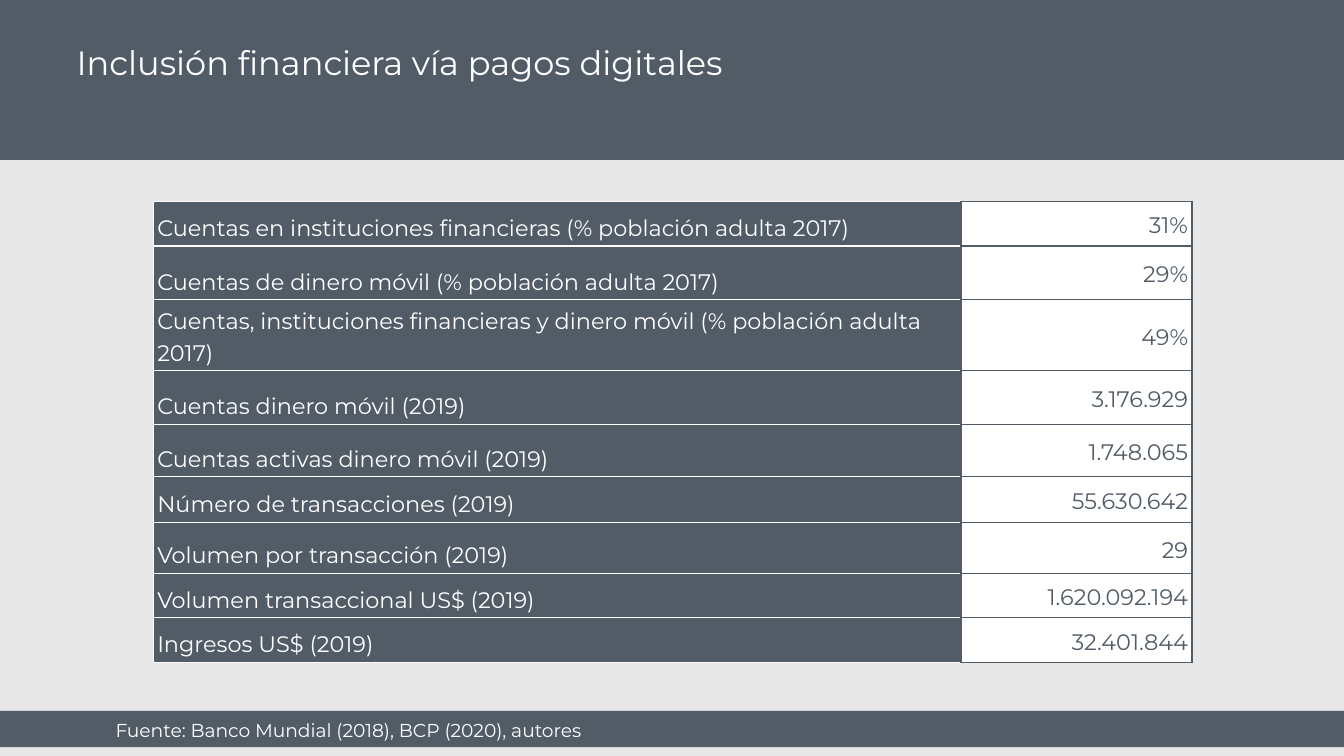
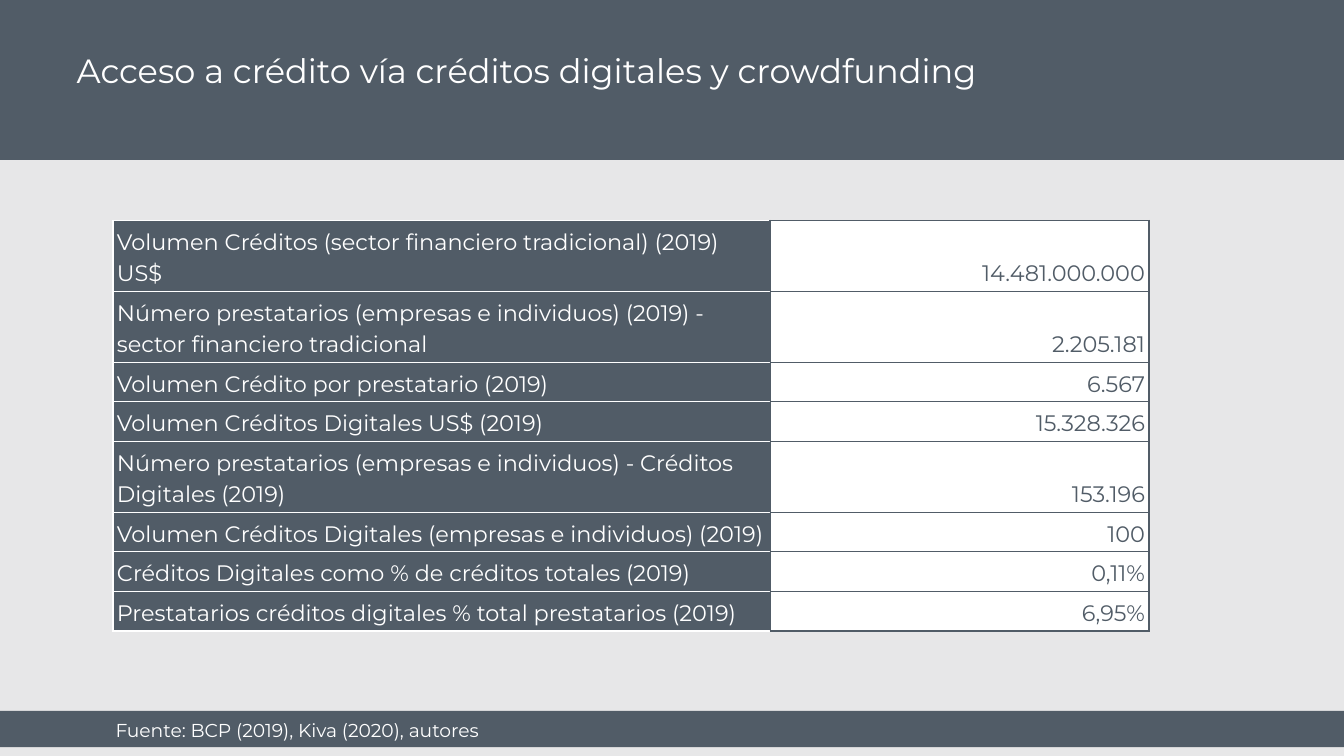
from pptx import Presentation
from pptx.dml.color import RGBColor
from pptx.enum.shapes import MSO_SHAPE
from pptx.enum.text import MSO_ANCHOR as ANCHOR, MSO_AUTO_SIZE, PP_ALIGN as ALIGN
from pptx.oxml.ns import qn
from pptx.util import Inches, Pt
from lxml.etree import SubElement

SLATE, WHITE, PAPER = "515C67", "FFFFFF", "E7E7E8"
FONT = "Montserrat"
BANDS = [(0, 5.29, 10, 0.27), (0, -0.07, 10, 1.26)]
SOURCE_BOX = (0.76, 5.22, 6.45, 0.27)
ONE_LINE, TWO_LINES = 0.28, 0.5

PAYMENTS = [
    ("Cuentas en instituciones financieras (% población adulta 2017)", "31%", 0.33),
    ("Cuentas de dinero móvil (% población adulta 2017)", "29%", 0.4),
    ("Cuentas, instituciones financieras y dinero móvil (% población adulta 2017)",
     "49%", TWO_LINES),
    ("Cuentas dinero móvil (2019)", "3.176.929", 0.4),
    ("Cuentas activas dinero móvil (2019)", "1.748.065", 0.39),
    ("Número de transacciones (2019)", "55.630.642", 0.34),
    ("Volumen por transacción (2019)", "29", 0.38),
    ("Volumen transaccional US$ (2019)", "1.620.092.194", 0.33),
    ("Ingresos US$ (2019)", "32.401.844", 0.33),
]
CREDIT = [
    ("Volumen Créditos (sector financiero tradicional) (2019) US$", "14.481.000.000", TWO_LINES),
    ("Número prestatarios (empresas e individuos) (2019) - sector financiero tradicional",
     "2.205.181", TWO_LINES),
    ("Volumen Crédito por prestatario (2019)", "6.567", ONE_LINE),
    ("Volumen Créditos Digitales US$ (2019)", "15.328.326", ONE_LINE),
    ("Número prestatarios (empresas e individuos) - Créditos Digitales (2019)",
     "153.196", TWO_LINES),
    ("Volumen Créditos Digitales (empresas e individuos) (2019)", "100", ONE_LINE),
    ("Créditos Digitales como % de créditos totales (2019)", "0,11%", ONE_LINE),
    ("Prestatarios créditos digitales % total prestatarios (2019)", "6,95%", ONE_LINE),
]


def rgb(color):
    return RGBColor.from_string(color)


def apply(target, **values):
    for name, value in values.items():
        setattr(target, name, value)


def margins(size):
    sides = ("left", "top", "right", "bottom")
    return {f"margin_{side}": Inches(size) for side in sides}


def paint(fill, color):
    fill.solid()
    fill.fore_color.rgb = rgb(color)


def write(p, text, size, color, **fmt):
    apply(p, **fmt)
    r = p.add_run()
    r.text = text
    apply(r.font, name=FONT, size=Pt(size), bold=False)
    r.font.color.rgb = rgb(color)


def fill_placeholder(sp, box, text, size, **fmt):
    apply(sp, **dict(zip(("left", "top", "width", "height"), map(Inches, box))))
    tf = sp.text_frame
    apply(tf, word_wrap=True, auto_size=MSO_AUTO_SIZE.NONE,
          vertical_anchor=ANCHOR.TOP, **margins(0.1))
    p = tf.paragraphs[0]
    apply(p, alignment=ALIGN.LEFT, space_before=Pt(0), **fmt)
    pPr = p._p.get_or_add_pPr()
    pPr.set("marL", "0")
    pPr.set("indent", "0")
    SubElement(pPr, qn("a:buNone"))
    write(p, text, size, WHITE)


def add_bands(s):
    for box in BANDS:
        sp = s.shapes.add_shape(MSO_SHAPE.RECTANGLE, *map(Inches, box))
        sp.shadow.inherit = False
        paint(sp.fill, SLATE)
        sp.line.fill.background()
        s.shapes._spTree.insert(2, sp._element)


def add_borders(cell, color):
    tcPr = cell._tc.get_or_add_tcPr()
    for side in ("L", "R", "T", "B"):
        ln = SubElement(tcPr, qn(f"a:ln{side}"), w=str(Pt(0.75)))
        fill = SubElement(ln, qn("a:solidFill"))
        SubElement(fill, qn("a:srgbClr"), val=color)


def add_figures(s, left, top, widths, rows, value_anchor):
    height = sum(row[2] for row in rows)
    box = map(Inches, (left, top, sum(widths), height))
    tbl = s.shapes.add_table(len(rows), len(widths), *box).table
    apply(tbl, first_row=False, horz_banding=False)
    for col, width in zip(tbl.columns, widths):
        col.width = Inches(width)
    styles = [(SLATE, WHITE, ALIGN.LEFT, ANCHOR.BOTTOM),
              (WHITE, SLATE, ALIGN.RIGHT, value_anchor)]
    for row, (label, value, row_height) in zip(tbl.rows, rows):
        row.height = Inches(row_height)
        for cell, text, style in zip(row.cells, (label, value), styles):
            back, ink, align, anchor = style
            add_borders(cell, ink)
            paint(cell.fill, back)
            apply(cell, vertical_anchor=anchor, **margins(0.03))
            write(cell.text_frame.paragraphs[0], text, 12, ink,
                  alignment=align, line_spacing=1.15)


def add_table_slide(prs, title, title_top, source, **figures):
    s = prs.slides.add_slide(prs.slide_layouts[1])
    add_bands(s)
    fill_placeholder(s.shapes.title, (0.47, title_top, 9.32, 0.69), title, 18)
    fill_placeholder(s.placeholders[1], SOURCE_BOX, source, 10,
                     line_spacing=1.15, space_after=Pt(16))
    add_figures(s, **figures)


def main():
    prs = Presentation()
    width = Inches(10)
    apply(prs, slide_width=width, slide_height=width * 9 // 16)
    paint(prs.slide_master.background.fill, PAPER)
    add_table_slide(prs, "Inclusión financiera vía pagos digitales", 0.21,
                    "Fuente: Banco Mundial (2018), BCP (2020), autores",
                    left=1.14, top=1.5, widths=(6.01, 1.72), rows=PAYMENTS,
                    value_anchor=ANCHOR.MIDDLE)
    add_table_slide(prs, "Acceso a crédito vía créditos digitales y crowdfunding", 0.27,
                    "Fuente: BCP (2019), Kiva (2020), autores",
                    left=0.84, top=1.64, widths=(4.89, 2.82), rows=CREDIT,
                    value_anchor=ANCHOR.BOTTOM)
    prs.save("out.pptx")


if __name__ == "__main__":
    main()
